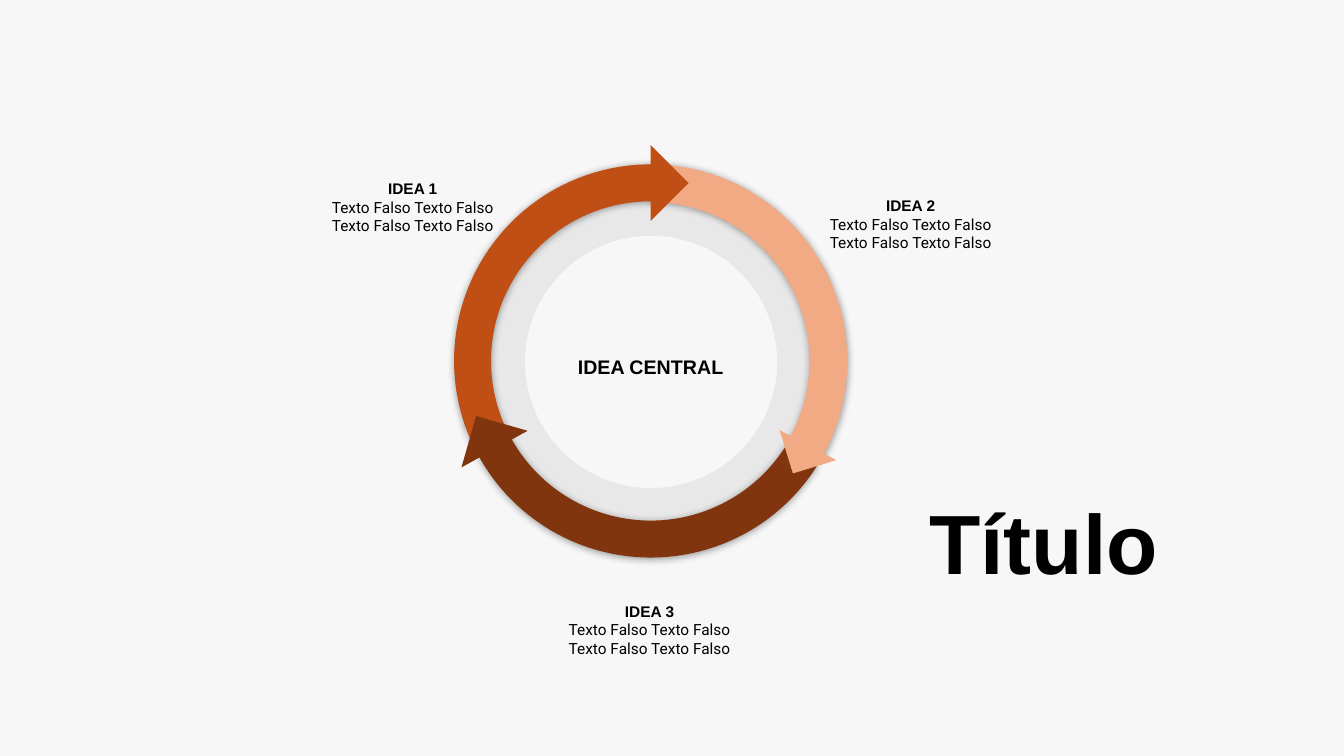
from lxml import etree
from pptx import Presentation
from pptx.dml.color import RGBColor
from pptx.enum.shapes import MSO_SHAPE
from pptx.enum.text import MSO_ANCHOR, MSO_AUTO_SIZE, PP_ALIGN
from pptx.oxml.ns import qn
from pptx.util import Pt

DONUT, ARC, TRIANGLE = MSO_SHAPE.DONUT, MSO_SHAPE.BLOCK_ARC, MSO_SHAPE.RIGHT_TRIANGLE
TOP, MIDDLE = MSO_ANCHOR.TOP, MSO_ANCHOR.MIDDLE
LEFT, CENTER = PP_ALIGN.LEFT, PP_ALIGN.CENTER
NO_AUTOFIT = MSO_AUTO_SIZE.NONE

BACKGROUND = RGBColor(0xF7, 0xF7, 0xF7)
RING_GREY = RGBColor(0xE8, 0xE8, 0xE8)
PEACH = RGBColor(0xF2, 0xAA, 0x84)
ORANGE = RGBColor(0xC0, 0x4F, 0x15)
BROWN = RGBColor(0x80, 0x35, 0x0E)
BLACK = RGBColor(0, 0, 0)

CYCLE_BOX = (324.4, 117.4, 280.8, 280.8)
IDEA_SIZE = (156.2, 69.8)
IDEA_LINE = "Texto Falso Texto Falso"


def points(box):
    return [Pt(length) for length in box]


def prepare_frame(frame, anchor):
    frame.word_wrap = True
    frame.auto_size = NO_AUTOFIT
    frame.vertical_anchor = anchor
    frame.margin_left = frame.margin_right = Pt(7.2)
    frame.margin_top = frame.margin_bottom = Pt(7.2)


def write_line(paragraph, text, size, spacing, font="Arial", bold=True, align=CENTER):
    paragraph.text = text
    paragraph.alignment = align
    paragraph.line_spacing = spacing
    paragraph.space_before = Pt(0)
    paragraph.font.name = font
    paragraph.font.size = Pt(size)
    paragraph.font.bold = bold
    paragraph.font.color.rgb = BLACK


def add_title(slide, text):
    title = slide.shapes.title
    title.left, title.top, title.width, title.height = points((656.6, 367.9, 278.6, 45.4))
    prepare_frame(title.text_frame, MIDDLE)
    write_line(title.text_frame.paragraphs[0], text, 60, 0.9, align=LEFT)


def add_center_label(slide, text):
    frame = slide.shapes.add_textbox(*points((389.5, 218.9, 150.5, 84.2))).text_frame
    prepare_frame(frame, MIDDLE)
    write_line(frame.paragraphs[0], text, 14, 1.15)


def add_idea(slide, heading, left, top):
    frame = slide.shapes.add_textbox(*points((left, top, *IDEA_SIZE))).text_frame
    prepare_frame(frame, TOP)
    write_line(frame.paragraphs[0], heading, 11, Pt(13.2))
    for _ in range(2):
        write_line(frame.add_paragraph(), IDEA_LINE, 11, Pt(13.2), "Roboto", False)


def add_figure(slide, kind, box, color, rotation=0, adjustments=()):
    figure = slide.shapes.add_shape(kind, *points(box))
    figure.shadow.inherit = False
    figure.fill.solid()
    figure.fill.fore_color.rgb = color
    figure.line.fill.background()
    figure.rotation = rotation
    for index, value in enumerate(adjustments):
        figure.adjustments[index] = value
    return figure


def add_arc(slide, color, rotation, adjustments, flipped=True):
    arc = add_figure(slide, ARC, CYCLE_BOX, color, rotation, adjustments)
    properties = arc._element.spPr
    if flipped:
        properties.find(qn("a:xfrm")).set("flipH", "1")
    shadow = etree.SubElement(
        properties.find(qn("a:effectLst")), qn("a:outerShdw"),
        blurRad=str(Pt(5.6)), dist=str(Pt(0.8)), dir="5400000",
        algn="t", rotWithShape="0")
    shade = etree.SubElement(shadow, qn("a:srgbClr"), val=str(BLACK))
    etree.SubElement(shade, qn("a:alpha"), val="40000")


def add_arrowhead(slide, color, left, top, side, rotation):
    add_figure(slide, TRIANGLE, (left, top, side, side), color, rotation)


def main():
    deck = Presentation()
    deck.slide_width, deck.slide_height = Pt(960), Pt(540)
    slide = deck.slides.add_slide(deck.slide_layouts[5])
    slide.background.fill.solid()
    slide.background.fill.fore_color.rgb = BACKGROUND

    add_title(slide, "Título")
    add_figure(slide, DONUT, (332.6, 126, 265, 265), RING_GREY, adjustments=[0.16])
    add_center_label(slide, "IDEA CENTRAL")

    add_arc(slide, PEACH, 30, (144.14, 0.01, 0.096), flipped=False)
    add_arc(slide, ORANGE, 330, (143.49, 214.73, 0.094))
    add_arrowhead(slide, ORANGE, 445.7, 111.6, 38.2, 225)
    add_arc(slide, BROWN, 210, (143.16, 215.03, 0.094))
    add_arrowhead(slide, PEACH, 560.9, 301.7, 32.4, 342.9)
    add_arrowhead(slide, BROWN, 334.1, 301.7, 38.2, 106)

    add_idea(slide, "IDEA 1", 216.7, 121)
    add_idea(slide, "IDEA 2", 572.4, 133.2)
    add_idea(slide, "IDEA 3", 385.9, 422.6)
    deck.save("out.pptx")


if __name__ == "__main__":
    main()
